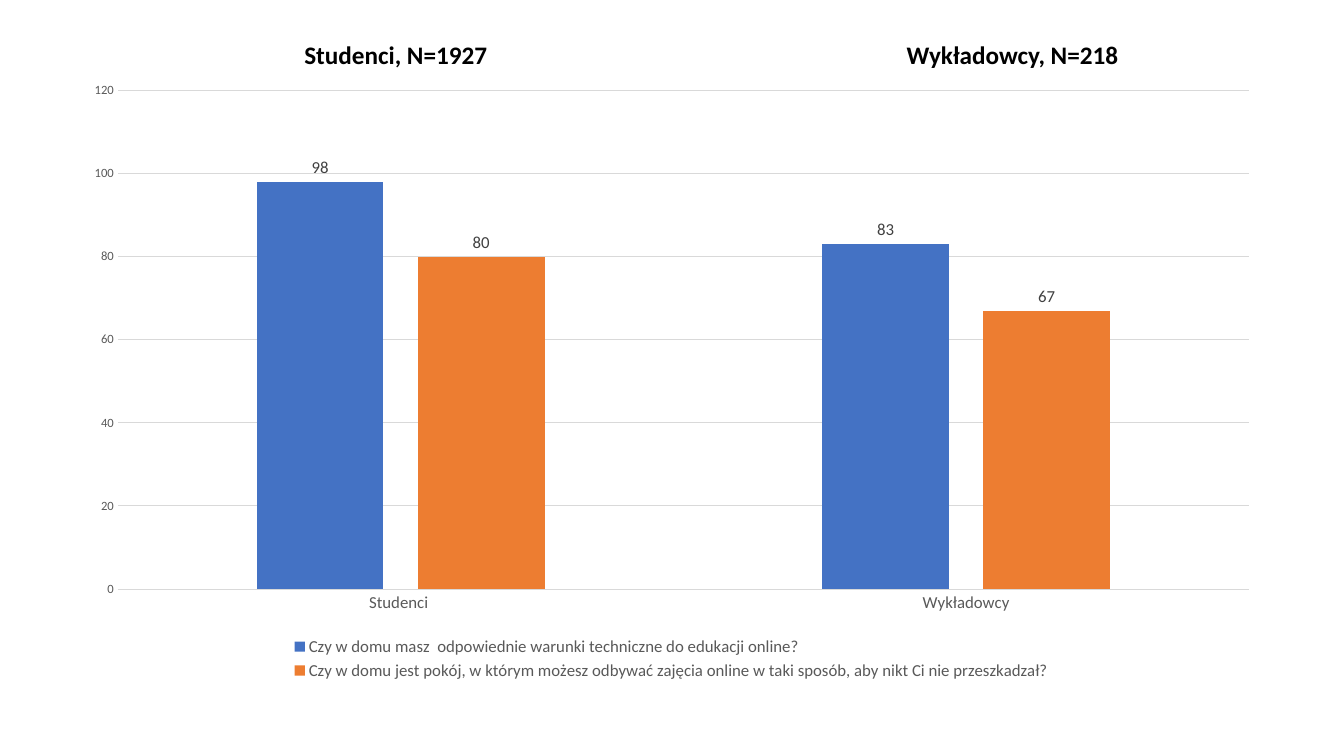
from pptx import Presentation
from pptx.chart.data import CategoryChartData as ChartData
from pptx.dml.color import RGBColor
from pptx.enum.chart import XL_CHART_TYPE as Kind
from pptx.enum.chart import XL_LABEL_POSITION as LabelPos
from pptx.enum.chart import XL_LEGEND_POSITION as LegendPos
from pptx.enum.chart import XL_TICK_MARK as Tick
from pptx.enum.text import MSO_AUTO_SIZE as Fit
from pptx.util import Cm, Pt

BLACK = RGBColor(0x00, 0x00, 0x00)
DARK = RGBColor(0x40, 0x40, 0x40)
GREY = RGBColor(0x59, 0x59, 0x59)
PALE = RGBColor(0xD9, 0xD9, 0xD9)
BLUE = RGBColor(0x44, 0x72, 0xC4)
ORANGE = RGBColor(0xED, 0x7D, 0x31)

FONT = "Calibri"
GROUPS = ["Studenci ", "Wykładowcy"]
# Question, values per group, bar colour
ANSWERS = [
    ("Czy w domu masz  odpowiednie warunki techniczne do edukacji online?",
     (98, 83), BLUE),
    ("Czy w domu jest pokój, w którym możesz odbywać zajęcia online "
     "w taki sposób, aby nikt Ci nie przeszkadzał?",
     (80, 67), ORANGE),
]


def set_font(font, size, color, bold=False):
    font.name = FONT
    font.size = Pt(size)
    font.color.rgb = color
    font.bold = bold


def set_line(line, color):
    line.color.rgb = color
    line.width = Pt(0.75)


def add_title(slide, text, left, width, wrap):
    box = slide.shapes.add_textbox(Cm(left), Cm(0.87), Cm(width), Cm(1.03))
    frame = box.text_frame
    frame.word_wrap = wrap
    frame.auto_size = Fit.SHAPE_TO_FIT_TEXT
    run = frame.paragraphs[0].add_run()
    run.text = text
    set_font(run.font, 18, BLACK, bold=True)


def style_axes(chart):
    groups, scale = chart.category_axis, chart.value_axis
    for axis, size in ((groups, 12), (scale, 9)):
        axis.major_tick_mark = axis.minor_tick_mark = Tick.NONE
        set_font(axis.tick_labels.font, size, GREY)
    set_line(groups.format.line, PALE)
    scale.format.line.fill.background()
    scale.minimum_scale, scale.maximum_scale = 0, 120
    scale.major_unit = 20
    scale.has_major_gridlines = True
    set_line(scale.major_gridlines.format.line, PALE)


def style_bars(plot):
    plot.gap_width = 219
    plot.overlap = -27
    plot.vary_by_categories = False
    for bars, (_, _, color) in zip(plot.series, ANSWERS):
        bars.invert_if_negative = False
        bars.format.fill.solid()
        bars.format.fill.fore_color.rgb = color
        labels = bars.data_labels
        labels.show_value = True
        labels.position = LabelPos.OUTSIDE_END
        set_font(labels.font, 12, DARK)


def add_bars(slide):
    data = ChartData()
    data.categories = GROUPS
    for question, values, _ in ANSWERS:
        data.add_series(question, values)
    chart = slide.shapes.add_chart(
        Kind.COLUMN_CLUSTERED, Cm(1.78), Cm(1.78), Cm(30.3), Cm(15.47), data
    ).chart
    chart.has_title = False
    set_font(chart.font, 10, BLACK)
    style_axes(chart)
    style_bars(chart.plots[0])
    # Legend under the bars
    chart.has_legend = True
    chart.legend.position = LegendPos.BOTTOM
    chart.legend.include_in_layout = False
    set_font(chart.legend.font, 12, GREY)


def main():
    deck = Presentation()
    deck.slide_width, deck.slide_height = Cm(33.87), Cm(19.05)
    slide = deck.slides.add_slide(deck.slide_layouts[6])
    # Chart, then a heading above each group
    add_bars(slide)
    add_title(slide, "Studenci, N=1927", 7.42, 5.59, True)
    add_title(slide, "Wykładowcy, N=218", 22.6, 5.89, False)
    deck.save("out.pptx")


if __name__ == "__main__":
    main()
